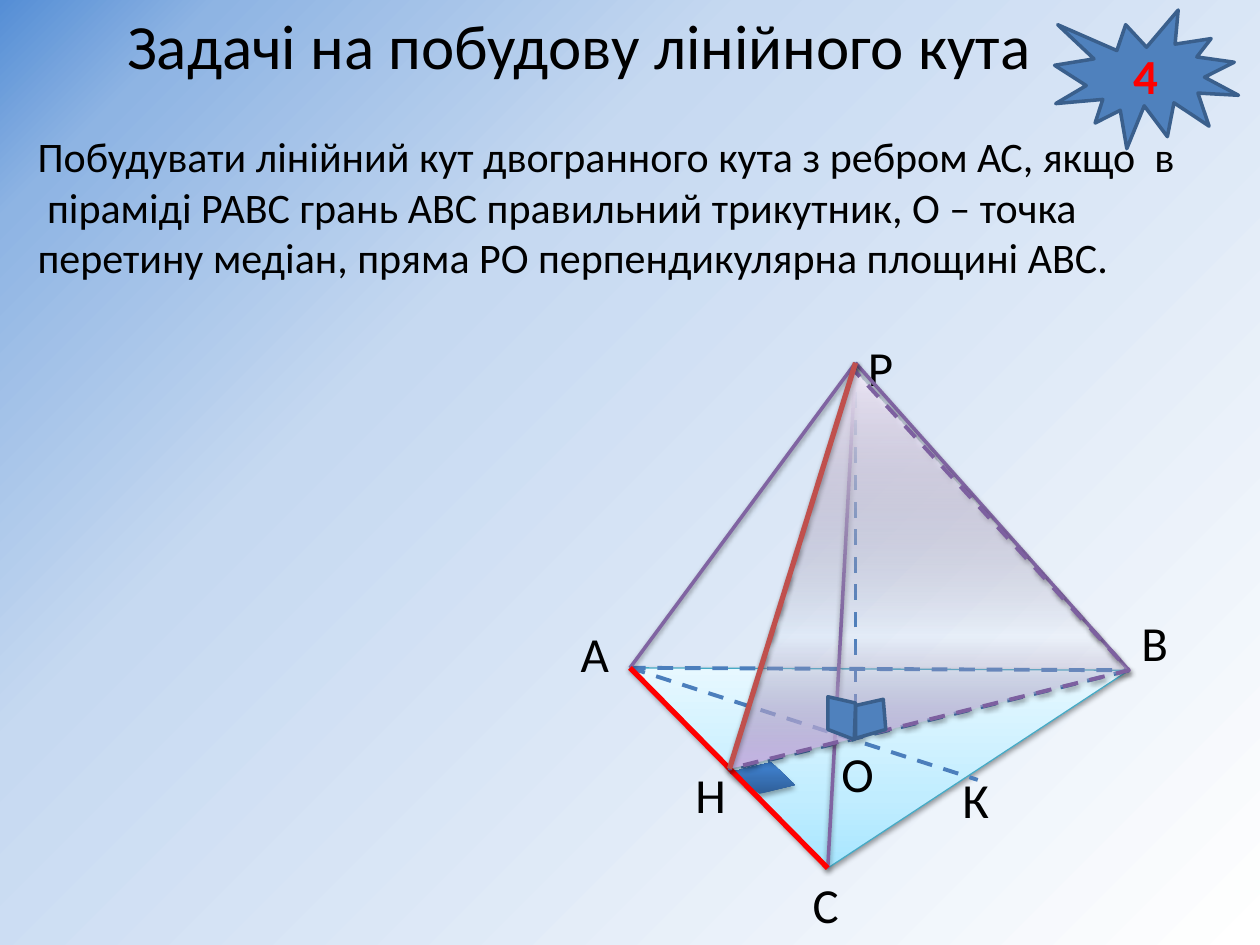
from lxml.etree import SubElement
from pptx import Presentation
from pptx.dml.color import RGBColor
from pptx.enum.dml import MSO_LINE
from pptx.enum.shapes import MSO_CONNECTOR, MSO_SHAPE
from pptx.enum.text import MSO_ANCHOR, MSO_AUTO_SIZE, PP_ALIGN
from pptx.oxml import parse_xml
from pptx.oxml.ns import nsdecls, qn
from pptx.util import Inches, Pt

COLORS = {
    "text": "000000", "red": "FF0000", "blue": "4F81BD", "blue edge": "3A5F8C",
    "hidden edge": "4B7EBC", "edge": "8064A2", "slant": "C0504D",
    "base edge": "46AAC5", "section edge": "7D60A0",
}
BACKGROUND = [(0, "558ED5", 100), (10, "8EB4E3", 100), (34, "C6D9F1", 100), (100, "FFFFFF", 100)]
BASE = [(0, "A7E6FF", 100), (35, "C1EDFF", 100), (100, "E7F8FF", 100)]
ANGLE = [(0, "2F5F99", 100), (80, "3D7CC7", 100), (100, "3A7CCB", 100)]
SECTION = [(0, "C9B5E8", 95), (33, "D8CBEE", 0), (100, "F0EAF9", 100)]
UPWARD = '<a:lin ang="16200000" scaled="1"/>'
FROM_CORNER = '<a:path path="circle"><a:fillToRect r="100000" b="100000"/></a:path>'
SOFT = {"alpha": 38, "blur": 3.1, "dist": 1.6}
STRONG = {"alpha": 35, "blur": 3.1, "dist": 1.8}

TITLE = "Задачі на побудову лінійного кута"
TASK = [
    "Побудувати лінійний кут двогранного кута з ребром АС, якщо  в",
    " піраміді РАВС грань АВС правильний трикутник, О – точка",
    "перетину медіан, пряма РО перпендикулярна площині АВС.",
]
A, B, C, P = (5, 5.3), (8.96, 5.32), (6.57, 6.89), (6.79, 2.88)
H, K, O = (5.79, 6.1), (7.76, 6.19), (6.79, 5.85)
LABELS = [
    ("А", 4.51, 4.9, 0.43), ("В", 8.96, 4.81, 0.43), ("С", 6.35, 6.89, 0.41),
    ("К", 7.54, 6.06, 0.43), ("Н", 5.42, 6.02, 0.45), ("О", 6.58, 5.85, 0.46),
    ("Р", 6.79, 2.63, 0.41),
]
MEDIANS_AND_HEIGHT = [(A, K), (B, (5.87, 6.09)), (O, P)]
ANGLE_AT_H = [(5.79, 6.13), (6.12, 6.05), (6.31, 6.23), (6.03, 6.3)]
SECTION_CORNERS = [P, H, B, (6.77, 2.93)]
ANGLES_AT_O = [
    [(6.79, 5.86), (6.79, 5.6), (7.01, 5.55), (7.03, 5.79)],
    [(6.78, 5.87), (6.57, 5.79), (6.57, 5.53), (6.79, 5.58)],
]


def rgb(name):
    return RGBColor.from_string(COLORS[name])


def gradient(stops, direction):
    marks = "".join(
        f'<a:gs pos="{pos * 1000}"><a:srgbClr val="{color}">'
        f'<a:alpha val="{alpha * 1000}"/></a:srgbClr></a:gs>'
        for pos, color, alpha in stops)
    return parse_xml(f'<a:gradFill {nsdecls("a")} rotWithShape="1">'
                     f'<a:gsLst>{marks}</a:gsLst>{direction}</a:gradFill>')


def set_line(part, color, width, dashed=False):
    part.line.color.rgb = rgb(color)
    part.line.width = Pt(width)
    if dashed:
        part.line.dash_style = MSO_LINE.DASH


def set_shadow(part, shadow):
    properties = part.element.spPr
    for old in properties.findall(qn("a:effectLst")):
        properties.remove(old)
    effects = SubElement(properties, qn("a:effectLst"))
    if shadow:
        effects.append(parse_xml(
            f'<a:outerShdw {nsdecls("a")} blurRad="{Pt(shadow["blur"])}" '
            f'dist="{Pt(shadow["dist"])}" dir="5400000" rotWithShape="0">'
            f'<a:srgbClr val="000000"><a:alpha val="{shadow["alpha"] * 1000}"/>'
            f'</a:srgbClr></a:outerShdw>'))


def add_segment(shapes, start, end, color, width, dashed=False, shadow=None):
    ends = [Inches(value) for value in (*start, *end)]
    segment = shapes.add_connector(MSO_CONNECTOR.STRAIGHT, *ends)
    set_line(segment, color, width, dashed)
    set_shadow(segment, shadow)


def add_face(shapes, corners, stops=None, line=None, shadow=None):
    first, *others = [(Inches(x), Inches(y)) for x, y in corners]
    builder = shapes.build_freeform(*first)
    builder.add_line_segments(others, close=True)
    face = builder.convert_to_shape()
    if stops:
        face.fill.background()
        properties = face.element.spPr
        properties.replace(properties.find(qn("a:noFill")), gradient(stops, UPWARD))
    else:
        face.fill.solid()
        face.fill.fore_color.rgb = rgb("blue")
    if line:
        set_line(face, *line)
    else:
        face.line.fill.background()
    set_shadow(face, shadow)


def write(frame, lines, size, color="text", **paragraph_format):
    for number, line in enumerate(lines):
        paragraph = frame.add_paragraph() if number else frame.paragraphs[0]
        for key, value in paragraph_format.items():
            setattr(paragraph, key, value)
        run = paragraph.add_run()
        run.text = line
        for key, value in {"name": "Calibri", "size": Pt(size)}.items():
            setattr(run.font, key, value)
        run.font.color.rgb = rgb(color)


def add_text(shapes, lines, size, *box):
    frame = shapes.add_textbox(*map(Inches, box)).text_frame
    frame.word_wrap = False
    frame.auto_size = MSO_AUTO_SIZE.SHAPE_TO_FIT_TEXT
    write(frame, lines, size)


def main():
    deck = Presentation()
    deck.slide_width, deck.slide_height = Inches(10), Inches(7.5)
    slide = deck.slides.add_slide(deck.slide_layouts[6])
    shapes = slide.shapes

    slide.background.fill.solid()
    backdrop = slide.element.cSld.find(qn("p:bg")).find(qn("p:bgPr"))
    backdrop.replace(backdrop.find(qn("a:solidFill")), gradient(BACKGROUND, FROM_CORNER))

    base = shapes.add_group_shape().shapes
    add_face(base, [A, B, C], BASE, ("base edge", 0.75), SOFT)
    add_segment(base, A, B, "hidden edge", 2.25, dashed=True)

    add_text(shapes, TASK, 24, 0.2, 0.99, 9.63, 1.31)
    for start, end in MEDIANS_AND_HEIGHT:
        add_segment(shapes, start, end, "hidden edge", 2.25, dashed=True)
    for letter, left, top, width in LABELS:
        add_text(shapes, [letter], 28, left, top, width, 0.57)
    for vertex in (B, C, A):
        add_segment(shapes, P, vertex, "edge", 2, shadow=SOFT)

    add_face(shapes, ANGLE_AT_H, ANGLE, shadow=STRONG)
    add_segment(shapes, A, C, "red", 3)

    section = shapes.add_group_shape().shapes
    add_face(section, SECTION_CORNERS, SECTION, ("section edge", 2.25, True), SOFT)
    add_segment(section, P, H, "slant", 3, shadow=STRONG)

    right_angles = shapes.add_group_shape().shapes
    for corners in ANGLES_AT_O:
        add_face(right_angles, corners, line=("blue edge", 2))

    add_text(shapes, [TITLE], 36, 0.91, 0, 7.45, 0.71)
    seal = shapes.add_shape(MSO_SHAPE.EXPLOSION1, *map(Inches, (8.37, 0.08, 1.46, 1.1)))
    seal.fill.solid()
    seal.fill.fore_color.rgb = rgb("blue")
    set_line(seal, "blue edge", 2)
    seal.shadow.inherit = False
    seal.text_frame.vertical_anchor = MSO_ANCHOR.MIDDLE
    write(seal.text_frame, ["4"], 28, "red", alignment=PP_ALIGN.CENTER)
    seal.text_frame.paragraphs[0].runs[0].font.bold = True

    deck.save("out.pptx")


if __name__ == "__main__":
    main()
